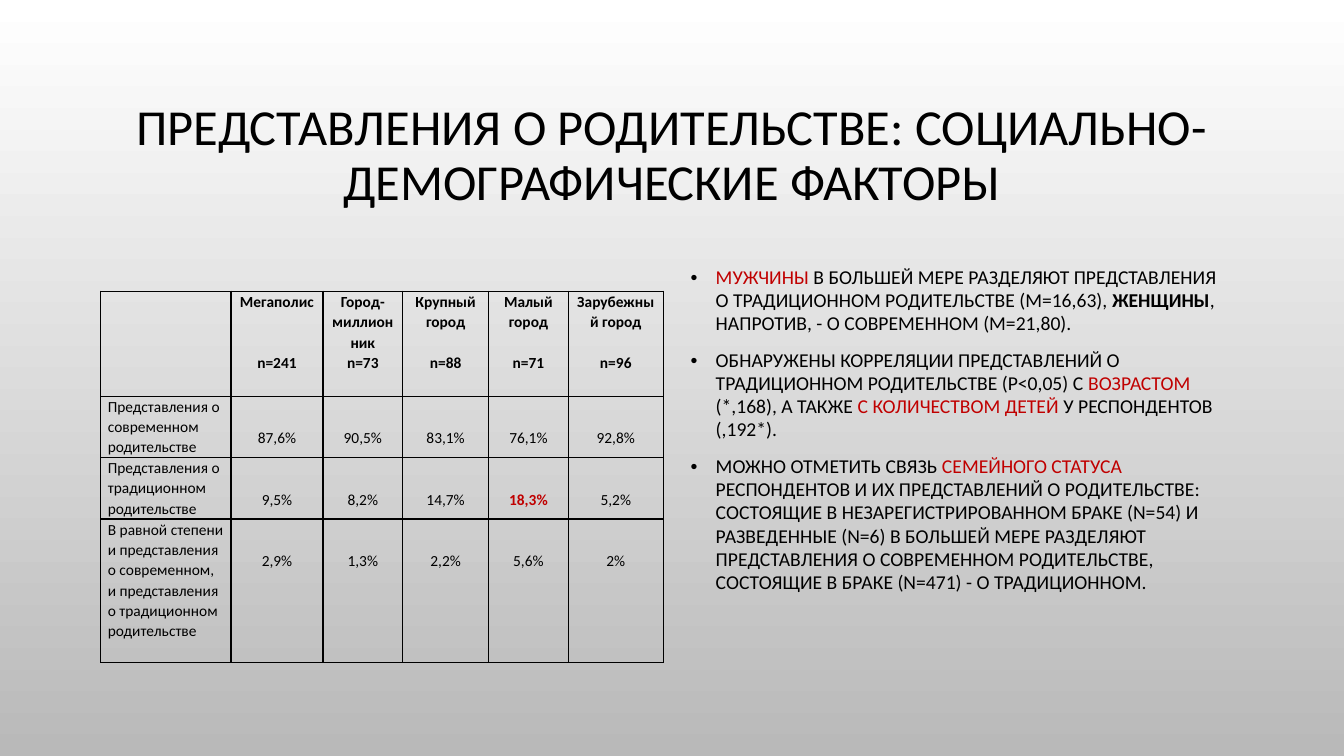
import pptx
import pptx.util
import pptx.dml.color
import pptx.enum.text
import pptx.oxml
import pptx.oxml.ns
from lxml import etree

Pt, Inches = pptx.util.Pt, pptx.util.Inches
ALIGN = pptx.enum.text.PP_ALIGN
ANCHOR = pptx.enum.text.MSO_ANCHOR
FONT = "Calibri"
COLORS = {"ink": "000000", "red": "C00000", "top": "FFFFFF", "base": "B9B9B9"}
WIDE, HIGH = Inches(13.33), Inches(7.5)

# Boxes: left, top, width, height in percent of the slide
BOXES = {
    "title": (7.5, 9.07, 85, 23.3),
    "table": (7.5, 38.53, 41.86, 49.07),
    "list": (50.64, 34.53, 41.86, 49.87),
}

COLS = [1.29, 0.91, 0.79, 0.85, 0.79, 0.94]
ROWS = [1.04, 0.61, 0.61, 1.42]
LINE = 14.4  # height of one table line, points

# City, number asked, lines left free between them
CITIES = [
    ("Мегаполис", "n=241", 2),
    ("Город-миллионник", "n=73", 0),
    ("Крупный город", "n=88", 1),
    ("Малый город", "n=71", 1),
    ("Зарубежный город", "n=96", 1),
]
VIEWS = [
    ("Представления о современном родительстве",
     ["87,6%", "90,5%", "83,1%", "76,1%", "92,8%"]),
    ("Представления о традиционном родительстве",
     ["9,5%", "8,2%", "14,7%", "18,3%", "5,2%"]),
    ("В равной степени и представления о современном, "
     "и представления о традиционном родительстве",
     ["2,9%", "1,3%", "2,2%", "5,6%", "2%"]),
]
PEAK = "18,3%"

# Runs: text, then colour, then bold
POINTS = [
    [("МУЖЧИНЫ", "red", False),
     (" В БОЛЬШЕЙ МЕРЕ РАЗДЕЛЯЮТ ПРЕДСТАВЛЕНИЯ О ТРАДИЦИОННОМ "
      "РОДИТЕЛЬСТВЕ (М=16,63), ", "ink", False),
     ("ЖЕНЩИНЫ", "ink", True),
     (", НАПРОТИВ, - О СОВРЕМЕННОМ (М=21,80).", "ink", False)],
    [("ОБНАРУЖЕНЫ КОРРЕЛЯЦИИ ПРЕДСТАВЛЕНИЙ О ТРАДИЦИОННОМ "
      "РОДИТЕЛЬСТВЕ (Р<0,05) С ", "ink", False),
     ("ВОЗРАСТОМ ", "red", False),
     ("(*,168), А ТАКЖЕ ", "ink", False),
     ("С КОЛИЧЕСТВОМ ДЕТЕЙ ", "red", False),
     ("У РЕСПОНДЕНТОВ (,192*).", "ink", False)],
    [("МОЖНО ОТМЕТИТЬ СВЯЗЬ ", "ink", False),
     ("СЕМЕЙНОГО СТАТУСА ", "red", False),
     ("РЕСПОНДЕНТОВ И ИХ ПРЕДСТАВЛЕНИЙ О РОДИТЕЛЬСТВЕ: СОСТОЯЩИЕ В "
      "НЕЗАРЕГИСТРИРОВАННОМ БРАКЕ (N=54) И РАЗВЕДЕННЫЕ (N=6) В БОЛЬШЕЙ "
      "МЕРЕ РАЗДЕЛЯЮТ ПРЕДСТАВЛЕНИЯ О СОВРЕМЕННОМ РОДИТЕЛЬСТВЕ, "
      "СОСТОЯЩИЕ В БРАКЕ (N=471) - О ТРАДИЦИОННОМ.", "ink", False)],
]


def rgb(name):
    return pptx.dml.color.RGBColor.from_string(COLORS[name])


def place(key):
    return [int(side * part / 100)
            for side, part in zip((WIDE, HIGH, WIDE, HIGH), BOXES[key])]


def style(font, size, color="ink", bold=False):
    font.name, font.size, font.bold = FONT, Pt(size), bold
    font.color.rgb = rgb(color)


def add(parent, tag, **attrs):
    node = etree.SubElement(parent, pptx.oxml.ns.qn(tag))
    for key, value in attrs.items():
        node.set(key, value)
    return node


def paint(slide):
    fill = slide.background.fill
    fill.gradient()
    fill.gradient_angle = 270
    for stop, name in zip(fill.gradient_stops, ("top", "base")):
        stop.color.rgb = rgb(name)


def head(slide, box):
    title = slide.shapes.title
    title.left, title.top, title.width, title.height = box
    frame = title.text_frame
    frame.word_wrap = True
    frame.vertical_anchor = ANCHOR.MIDDLE
    frame.text = ("ПРЕДСТАВЛЕНИЯ О РОДИТЕЛЬСТВЕ: "
                  "СОЦИАЛЬНО-ДЕМОГРАФИЧЕСКИЕ ФАКТОРЫ")
    para = frame.paragraphs[0]
    para.alignment, para.line_spacing = ALIGN.CENTER, 0.9
    style(para.font, 36)


def frame_cell(cell):
    cell.margin_left = cell.margin_right = Inches(0.07)
    cell.margin_top = cell.margin_bottom = 0
    props = cell._tc.get_or_add_tcPr()
    for side in ("L", "R", "T", "B"):
        edge = add(props, "a:ln" + side, w=str(Pt(1)))
        add(add(edge, "a:solidFill"), "a:srgbClr", val=COLORS["ink"])
    cell.fill.background()


def write(cell, lines, align=ALIGN.CENTER, **look):
    cell.text = "\n".join(lines)
    for para in cell.text_frame.paragraphs:
        para.alignment, para.line_spacing = align, 1.07
        style(para.font, 11, **look)


def grid(slide, box):
    left, top, width, height = box
    table = slide.shapes.add_table(len(ROWS), len(COLS), *box).table
    table.first_row = table.horz_banding = False
    for col, part in zip(table.columns, COLS):
        col.width = int(width * part / sum(COLS))
    for row, part in zip(table.rows, ROWS):
        row.height = int(height * part / sum(ROWS))
    for cell in table.iter_cells():
        frame_cell(cell)

    # Header row
    for c, (city, count, gap) in enumerate(CITIES, 1):
        cell = table.cell(0, c)
        write(cell, [city, count], bold=True)
        cell.text_frame.paragraphs[1].space_before = Pt(gap * LINE)

    # Labels and shares
    for r, (label, values) in enumerate(VIEWS, 1):
        write(table.cell(r, 0), [label], ALIGN.LEFT)
        for c, value in enumerate(values, 1):
            cell = table.cell(r, c)
            peak = value == PEAK
            write(cell, [value], color="red" if peak else "ink", bold=peak)
            cell.margin_top = Pt(LINE + 8)


def bullets(slide, box):
    frame = slide.shapes.add_textbox(*box).text_frame
    frame.word_wrap = True
    for i, runs in enumerate(POINTS):
        para = frame.add_paragraph() if i else frame.paragraphs[0]
        props = para._p.get_or_add_pPr()
        props.set("marL", str(Inches(0.25)))
        props.set("indent", str(-Inches(0.25)))
        add(add(props, "a:buClr"), "a:srgbClr", val=COLORS["ink"])
        add(props, "a:buFont", typeface="Arial")
        add(props, "a:buChar", char="•")
        para.line_spacing = 0.98
        if i:
            para.space_before = Pt(10)
        for text, color, bold in runs:
            run = para.add_run()
            run.text = text
            style(run.font, 14, color, bold)


def main():
    deck = pptx.Presentation()
    deck.slide_width, deck.slide_height = WIDE, HIGH
    slide = deck.slides.add_slide(deck.slide_layouts[5])
    paint(slide)
    head(slide, place("title"))
    grid(slide, place("table"))
    bullets(slide, place("list"))
    deck.save("out.pptx")


if __name__ == "__main__":
    main()
